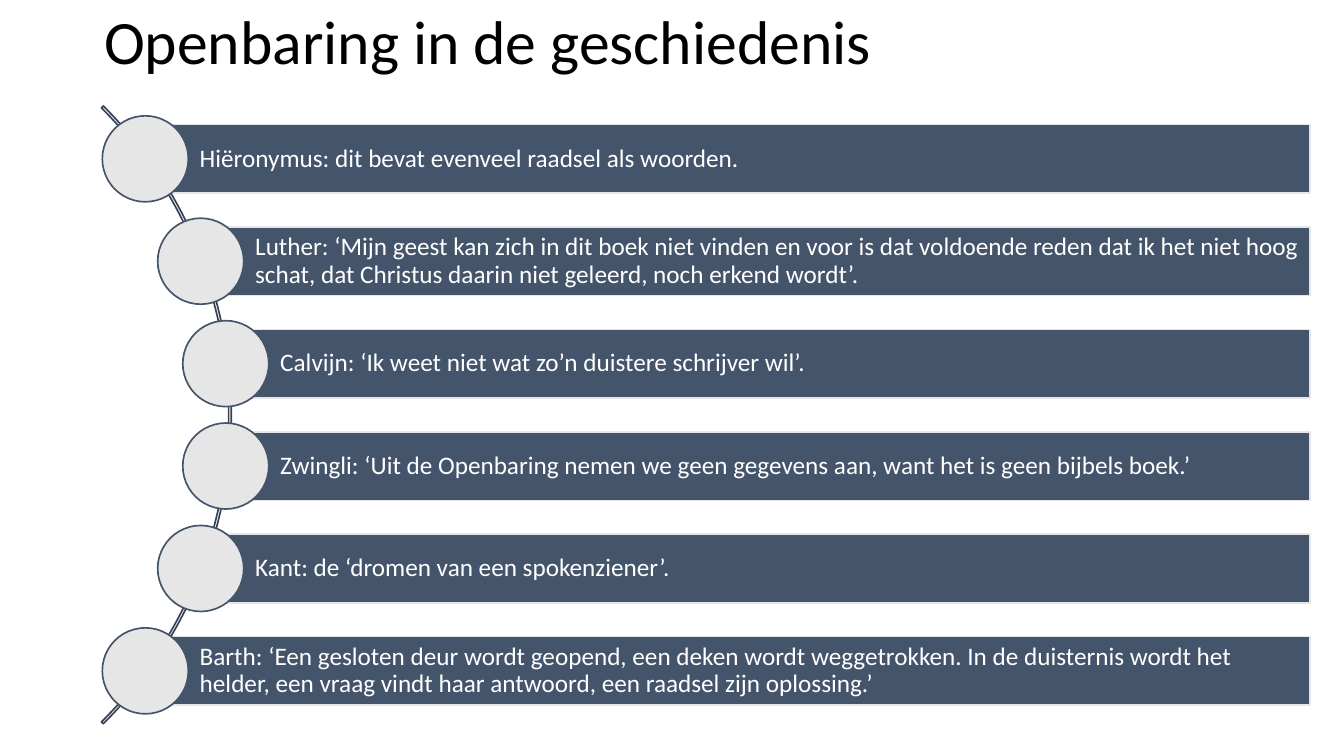
from math import sqrt

from pptx import Presentation
from pptx.dml.color import RGBColor
from pptx.enum.shapes import MSO_SHAPE
from pptx.enum.text import MSO_ANCHOR, MSO_AUTO_SIZE, PP_ALIGN
from pptx.util import Inches, Pt

RECTANGLE, OVAL, ARC = MSO_SHAPE.RECTANGLE, MSO_SHAPE.OVAL, MSO_SHAPE.BLOCK_ARC
MIDDLE, LEFT, NO_AUTOFIT = MSO_ANCHOR.MIDDLE, PP_ALIGN.LEFT, MSO_AUTO_SIZE.NONE

SLIDE_WIDTH, SLIDE_HEIGHT = 11.11, 6.25
NAVY, DARK_NAVY, GREY = "44546A", "364355", "E7E6E6"
TITLE = "Openbaring in de geschiedenis"
QUOTES = [
    "Hiëronymus: dit bevat evenveel raadsel als woorden.",
    "Luther: ‘Mijn geest kan zich in dit boek niet vinden en voor is dat voldoende "
    "reden dat ik het niet hoog schat, dat Christus daarin niet geleerd, noch erkend wordt’.",
    "Calvijn: ‘Ik weet niet wat zo’n duistere schrijver wil’.",
    "Zwingli: ‘Uit de Openbaring nemen we geen gegevens aan, want het is geen bijbels boek.’",
    "Kant: de ‘dromen van een spokenziener’.",
    "Barth: ‘Een gesloten deur wordt geopend, een deken wordt weggetrokken. In de "
    "duisternis wordt het helder, een vraag vindt haar antwoord, een raadsel zijn oplossing.’",
]


def color(hex_string):
    return RGBColor.from_string(hex_string)


def write(shape, text, *, size, font_color, insets):
    frame = shape.text_frame
    frame.word_wrap = True
    frame.auto_size = NO_AUTOFIT
    frame.vertical_anchor = MIDDLE
    frame.margin_left, frame.margin_top, frame.margin_right, frame.margin_bottom = map(Inches, insets)
    paragraph = frame.paragraphs[0]
    paragraph.alignment = LEFT
    paragraph.line_spacing = 0.9
    run = paragraph.add_run()
    run.text = text
    run.font.name = "Calibri"
    run.font.size = Pt(size)
    run.font.color.rgb = color(font_color)


def add_shape(slide, kind, box, *, line, fill=None):
    shape = slide.shapes.add_shape(kind, *map(Inches, box))
    shape.shadow.inherit = False
    if fill:
        shape.fill.solid()
        shape.fill.fore_color.rgb = color(fill)
    else:
        shape.fill.background()
    shape.line.color.rgb = color(line)
    shape.line.width = Pt(1)
    return shape


def add_title(slide, box):
    title = slide.shapes.title
    title.left, title.top, title.width, title.height = map(Inches, box)
    write(title, TITLE, size=36.7, font_color="000000", insets=(0.1, 0.05, 0.1, 0.05))


def add_curved_list(slide, box, quotes):
    """Place bars in equal rows, each led by a circle centred on a shared arc."""
    left, top, width, height = box
    pitch = height / len(quotes)
    bar_height, diameter = pitch * 0.67, pitch * 0.84
    radius = height * 0.707
    arc_center_x, arc_center_y = left - 2.54, top + height / 2

    arc_radius = radius + 0.02
    arc = add_shape(slide, ARC, (arc_center_x - arc_radius, arc_center_y - arc_radius,
                                 2 * arc_radius, 2 * arc_radius), line=DARK_NAVY)
    for index, value in enumerate((189, 27, 0.003)):
        arc.adjustments[index] = value

    for row, quote in enumerate(quotes):
        center_y = top + (row + 0.5) * pitch
        center_x = arc_center_x + sqrt(radius ** 2 - (center_y - arc_center_y) ** 2)
        bar = add_shape(slide, RECTANGLE, (center_x, center_y - bar_height / 2,
                                           left + width - center_x, bar_height),
                        fill=NAVY, line=GREY)
        write(bar, quote, size=15, font_color="FFFFFF", insets=(0.45, 0.04, 0.04, 0.04))
        add_shape(slide, OVAL, (center_x - diameter / 2, center_y - diameter / 2,
                                diameter, diameter), fill=GREY, line=NAVY)


def main():
    presentation = Presentation()
    presentation.slide_width = Inches(SLIDE_WIDTH)
    presentation.slide_height = Inches(SLIDE_HEIGHT)
    slide = presentation.slides.add_slide(presentation.slide_layouts[5])
    add_title(slide, (0.76, 0, 9.58, 0.74))
    add_curved_list(slide, (0.84, 0.89, 9.99, 5.08), QUOTES)
    presentation.save("out.pptx")


if __name__ == "__main__":
    main()
